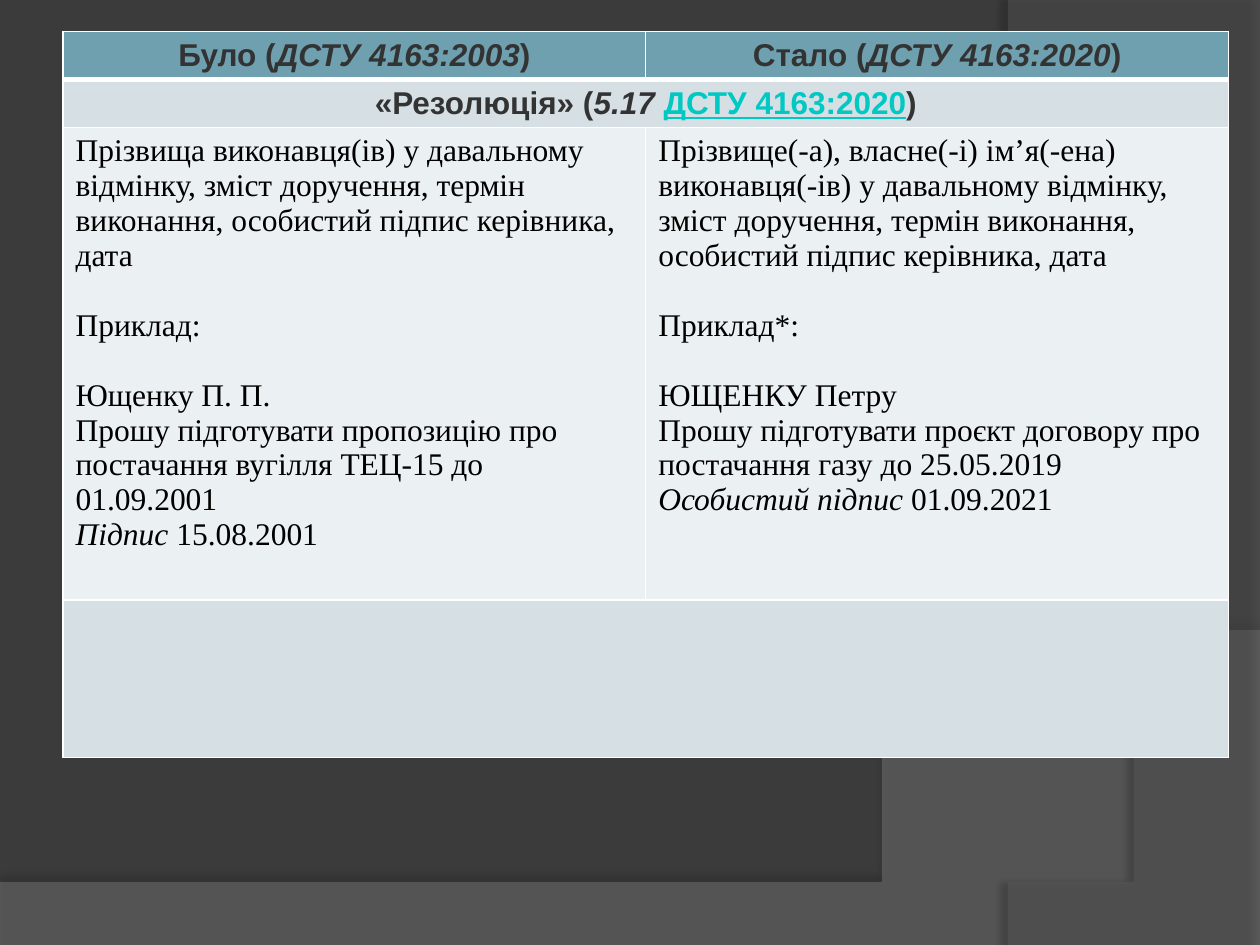
from lxml.etree import SubElement as Sub
from pptx import Presentation
from pptx.dml.color import RGBColor as Rgb
from pptx.enum.text import PP_ALIGN as Align
from pptx.oxml.ns import qn
from pptx.util import Inches, Pt

THEME = {
    "back": "3B3B3B", "rule": "FFFFFF", "head": "6EA0B0",
    "band": "D5DFE4", "body": "EBF0F2", "link": "00C8C3",
    "title": {"name": "Arial", "size": Pt(18), "bold": True, "ink": "333333"},
    "text": {"name": "Times New Roman", "size": Pt(18), "bold": False, "ink": "000000"},
    "gap": Pt(20),
}
IT = {"italic": True}
LINK = {"underline": True, "ink": THEME["link"]}

# A path is a start point, then line ends (one point) or curves (three points).
WAVES = [
    {"start": (0, 7.05), "fill": ("7F7F7F", 45), "shade": (35, 4, 3.5, 270),
     "path": [[(0, 7.51)], [(10, 7.51)], [(10, 5.2)],
              [(5.59, 7.29), (3.91, 7.19), (0, 7.05)]]},
    {"start": (10, 0.02), "fill": ("5E5E5E", 40), "shade": (45, 4, 4, 180),
     "path": [[(10, 7.5)], [(8.21, 7.5)],
              [(9.35, 6.19), (10.18, 3), (8, 0)], [(10, 0.02)]]},
]

# A cell is a list of paragraphs: (starts a new block, runs).
HEADS = [
    [(False, [("Було (", {}), ("ДСТУ 4163:2003", IT), (")", {})])],
    [(False, [("Стало (", {}), ("ДСТУ 4163:2020", IT), (")", {})])],
]
TOPIC = [(False, [("«Резолюція» (", {}), ("5.17 ", IT),
                  ("ДСТУ 4163:2020", LINK), (")", {})])]
BEFORE = [
    (False, [("Прізвища виконавця(ів) у давальному відмінку, зміст доручення, "
              "термін виконання, особистий підпис керівника, дата", {})]),
    (True, [("Приклад:", {})]),
    (True, [("Ющенку П. П.", {})]),
    (False, [("Прошу підготувати пропозицію про постачання вугілля ТЕЦ-15 "
              "до 01.09.2001", {})]),
    (False, [("Підпис", IT), (" 15.08.2001", {})]),
]
AFTER = [
    (False, [("Прізвище(-а), власне(-і) ім’я(-ена) виконавця(-ів) у давальному "
              "відмінку, зміст доручення, термін виконання, особистий підпис "
              "керівника, дата", {})]),
    (True, [("Приклад*:", {})]),
    (True, [("ЮЩЕНКУ Петру", {})]),
    (False, [("Прошу підготувати проєкт договору про постачання газу "
              "до 25.05.2019", {})]),
    (False, [("Особистий підпис", IT), (" 01.09.2021", {})]),
]
# One cell in a row spans both columns.
ROWS = [
    {"high": 0.38, "fill": "head", "font": "title", "align": Align.CENTER, "cells": HEADS},
    {"high": 0.38, "fill": "band", "font": "title", "align": Align.CENTER, "cells": [TOPIC]},
    {"high": 3.75, "fill": "body", "font": "text", "align": Align.LEFT, "cells": [BEFORE, AFTER]},
    {"high": 1.25, "fill": "band", "font": "text", "align": Align.LEFT, "cells": [[]]},
]
LEFT, TOP, WIDE = 0.5, 0.25, 9.25
STEPS = 40


def paint(fill, tone):
    fill.solid()
    fill.fore_color.rgb = Rgb.from_string(tone)


def fade(color, part):
    Sub(color, qn("a:alpha")).set("val", str(part * 1000))


def trace(start, path):
    """Turn lines and cubic curves into a list of points."""
    dots = [start]
    for part in path:
        if len(part) == 1:
            dots += part
            continue
        knots = [dots[-1], *part]
        for n in range(1, STEPS + 1):
            t = n / STEPS
            mix = ((1 - t) ** 3, 3 * t * (1 - t) ** 2, 3 * t * t * (1 - t), t ** 3)
            dots.append(tuple(sum(m * k[axis] for m, k in zip(mix, knots))
                              for axis in (0, 1)))
    return dots


def add_wave(slide, start, path, fill, shade):
    dots = trace(start, path)
    pen = slide.shapes.build_freeform(*dots[0], scale=Inches(1))
    pen.add_line_segments(dots[1:], close=True)
    shape = pen.convert_to_shape()
    tone, part = fill
    paint(shape.fill, tone)
    props = shape._element.spPr
    fade(props.find(qn("a:solidFill"))[0], part)
    shape.line.fill.background()
    shape.shadow.inherit = False
    dark, blur, dist, turn = shade
    cast = Sub(props.find(qn("a:effectLst")), qn("a:outerShdw"))
    for key, val in {"blurRad": Pt(blur), "dist": Pt(dist),
                     "dir": turn * 60000, "rotWithShape": 0}.items():
        cast.set(key, str(int(val)))
    ink = Sub(cast, qn("a:srgbClr"))
    ink.set("val", "000000")
    fade(ink, dark)


def edge(cell, sides):
    """Draw cell borders; schema order puts them before the fill."""
    props = cell._tc.get_or_add_tcPr()
    for spot, (side, width) in enumerate(sides.items()):
        line = Sub(props, qn("a:ln" + side))
        line.set("w", str(Pt(width)))
        Sub(Sub(line, qn("a:solidFill")), qn("a:srgbClr")).set("val", THEME["rule"])
        props.insert(spot, line)


def write(cell, paras, font, align):
    frame = cell.text_frame
    for n, (gap, runs) in enumerate(paras):
        para = frame.add_paragraph() if n else frame.paragraphs[0]
        para.alignment = align
        if gap:
            para.space_before = THEME["gap"]
        for text, extra in runs:
            run = para.add_run()
            run.text = text
            look = {**THEME[font], **extra}
            run.font.color.rgb = Rgb.from_string(look.pop("ink"))
            for key, val in look.items():
                setattr(run.font, key, val)


def add_grid(slide):
    high = sum(row["high"] for row in ROWS)
    grid = slide.shapes.add_table(len(ROWS), 2, Inches(LEFT), Inches(TOP),
                                  Inches(WIDE), Inches(high)).table
    for r, row in enumerate(ROWS):
        grid.rows[r].height = Inches(row["high"])
        for c in range(2):
            cell = grid.cell(r, c)
            paint(cell.fill, THEME[row["fill"]])
            edge(cell, {"L": 1, "R": 1, "T": 3 if r == 1 else 1,
                        "B": 3 if r == 0 else 1})
        if len(row["cells"]) == 1:
            grid.cell(r, 0).merge(grid.cell(r, 1))
        for c, paras in enumerate(row["cells"]):
            write(grid.cell(r, c), paras, row["font"], row["align"])


def main():
    deck = Presentation()
    deck.slide_width, deck.slide_height = Inches(10), Inches(7.5)
    slide = deck.slides.add_slide(deck.slide_layouts[6])
    paint(slide.background.fill, THEME["back"])
    for wave in WAVES:
        add_wave(slide, **wave)
    add_grid(slide)
    deck.save("out.pptx")


if __name__ == "__main__":
    main()
